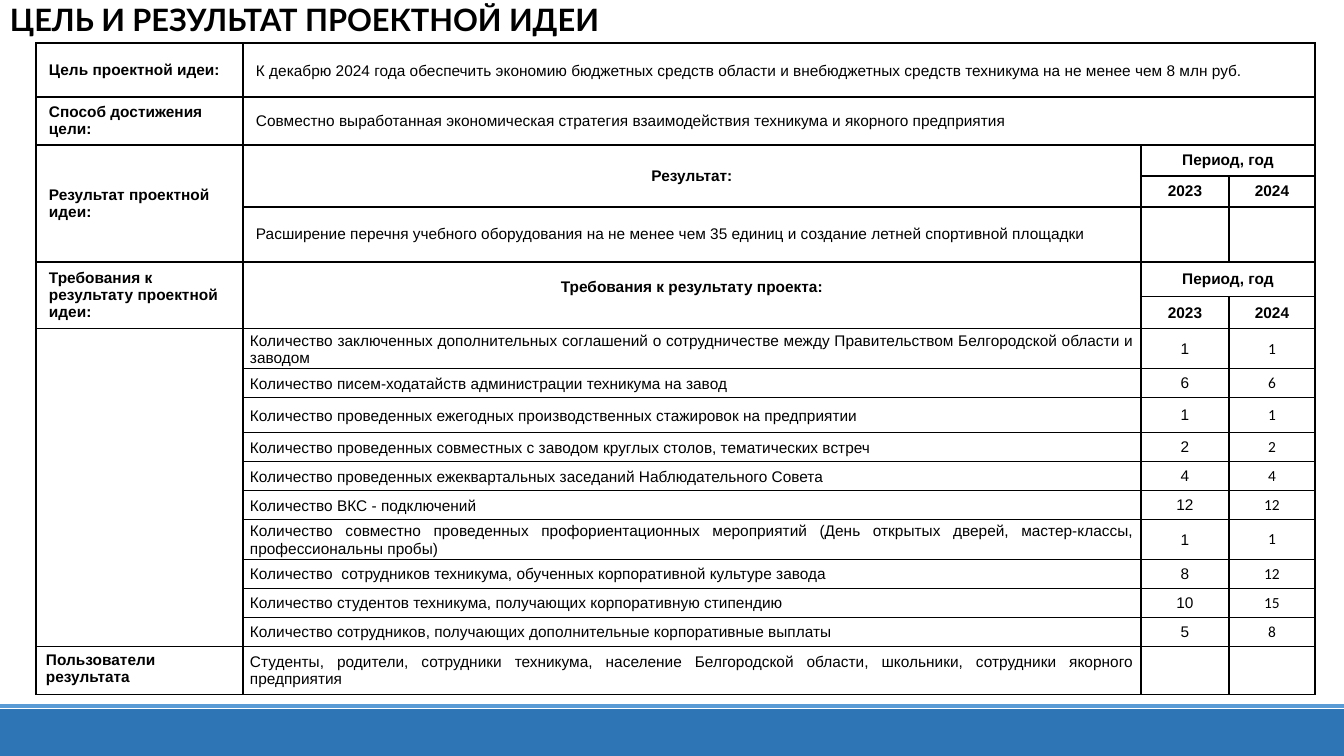
"""Build the slide on the goal and result of the project idea."""
from lxml import etree
from pptx import Presentation
from pptx.dml.color import RGBColor
from pptx.enum.shapes import MSO_CONNECTOR, MSO_SHAPE
from pptx.enum.text import MSO_ANCHOR, PP_ALIGN
from pptx.oxml.ns import qn
from pptx.util import Emu, Pt

LEFT, MID, JUST = PP_ALIGN.LEFT, PP_ALIGN.CENTER, PP_ALIGN.JUSTIFY
TOP, MIDDLE = MSO_ANCHOR.TOP, MSO_ANCHOR.MIDDLE
RECT, LINE = MSO_SHAPE.RECTANGLE, MSO_CONNECTOR.STRAIGHT
WIDTH, HEIGHT = 1344, 756
SCALE = 12192000 / WIDTH

TITLE = "ЦЕЛЬ И РЕЗУЛЬТАТ ПРОЕКТНОЙ ИДЕИ"
PERIOD = "Период, год"
YEARS = ("2023", "2024")
ITEMS = [
    ("Количество заключенных дополнительных соглашений о сотрудничестве между Правительством Белгородской области и заводом", 1, 1),
    ("Количество писем-ходатайств администрации техникума на завод", 6, 6),
    ("Количество проведенных ежегодных производственных стажировок на предприятии", 1, 1),
    ("Количество проведенных совместных с заводом круглых столов, тематических встреч", 2, 2),
    ("Количество проведенных ежеквартальных заседаний Наблюдательного Совета", 4, 4),
    ("Количество ВКС - подключений", 12, 12),
    ("Количество совместно проведенных профориентационных мероприятий (День открытых дверей, мастер-классы, профессиональны пробы)", 1, 1),
    ("Количество  сотрудников техникума, обученных корпоративной культуре завода", 8, 12),
    ("Количество студентов техникума, получающих корпоративную стипендию", 10, 15),
    ("Количество сотрудников, получающих дополнительные корпоративные выплаты", 5, 8),
]
CELLS = [
    (0, 0, "label", "Цель проектной идеи:"),
    (0, 1, "body", "К декабрю 2024 года обеспечить экономию бюджетных средств области и внебюджетных средств техникума на не менее чем 8 млн руб."),
    (1, 0, "label", "Способ достижения цели:"),
    (1, 1, "body", "Совместно выработанная экономическая стратегия взаимодействия техникума и якорного предприятия"),
    (2, 0, "label", "Результат проектной идеи:"),
    (2, 1, "head", "Результат:"),
    (4, 1, "body", "Расширение перечня учебного оборудования на не менее чем 35 единиц и создание летней спортивной площадки"),
    (5, 0, "label", "Требования к результату проектной идеи:"),
    (5, 1, "raised", "Требования к результату проекта:"),
    (17, 0, "users", "Пользователи результата"),
    (17, 1, "item", "Студенты, родители, сотрудники техникума, население Белгородской области, школьники, сотрудники якорного предприятия"),
]
FIRST = 7
SPANS = [(0, 1, 0, 3), (1, 1, 1, 3), (2, 0, 4, 0), (2, 1, 3, 1), (2, 2, 2, 3),
         (5, 0, 6, 0), (5, 1, 6, 1), (5, 2, 5, 3), (7, 0, 16, 0)]
COLS = [207, 898, 88, 86]
ROWS = [54, 48, 31, 31, 55, 35, 32, 40, 29, 35, 29, 29, 29, 40, 29, 29, 29, 48]

WIDE, THIN = (13, 5, 13, 5), (7, 1, 7, 0)
KINDS = {
    "label": (LEFT, True, "Arial", WIDE, MIDDLE),
    "body": (JUST, False, "Arial", WIDE, MIDDLE),
    "head": (MID, True, "Arial", WIDE, MIDDLE),
    "raised": (MID, True, "Arial", (13, 5, 13, 22), MIDDLE),
    "item": (JUST, False, "Arial", THIN, MIDDLE),
    "num": (MID, False, "Arial", WIDE, MIDDLE),
    "alt": (MID, False, "Calibri", WIDE, MIDDLE),
    "users": (LEFT, True, "Arial", (10, 5, 10, 5), TOP),
    "empty": (LEFT, False, "Arial", (0, 0, 0, 0), MIDDLE),
}


def px(num):
    return Emu(round(num * SCALE))


def color(code):
    return RGBColor.from_string(code)


def style(para, size, face, bold, align):
    para.alignment = align
    font = para.font
    font.size, font.name, font.bold = Pt(size), face, bold
    font.color.rgb = color("000000")


def border(cell):
    props = cell._tc.get_or_add_tcPr()
    for spot, side in enumerate(("lnL", "lnR", "lnT", "lnB")):
        line = etree.Element(qn("a:" + side), w=str(Pt(1)))
        fill = etree.SubElement(line, qn("a:solidFill"))
        etree.SubElement(fill, qn("a:srgbClr"), val="000000")
        props.insert(spot, line)


def put(cell, kind, text):
    align, bold, face, pads, anchor = KINDS[kind]
    cell.text = text
    cell.vertical_anchor = anchor
    (cell.margin_left, cell.margin_top,
     cell.margin_right, cell.margin_bottom) = map(px, pads)
    style(cell.text_frame.paragraphs[0], 11, face, bold, align)


def add_grid(slide):
    frame = slide.shapes.add_table(len(ROWS), len(COLS), px(36), px(43),
                                   px(sum(COLS)), px(sum(ROWS)))
    table = frame.table
    table.first_row = table.horz_banding = False
    for col, size in zip(table.columns, COLS):
        col.width = px(size)
    for row, size in zip(table.rows, ROWS):
        row.height = px(size)
    cells = list(CELLS)
    for top in (2, 5):
        cells.append((top, 2, "head", PERIOD))
        cells += [(top + 1, 2 + i, "head", year) for i, year in enumerate(YEARS)]
    for row, (text, old, new) in enumerate(ITEMS, FIRST):
        cells += [(row, 1, "item", text), (row, 2, "num", str(old)),
                  (row, 3, "alt", str(new))]
    filled = {(row, col): (kind, text) for row, col, kind, text in cells}
    for row in range(len(ROWS)):
        for col in range(len(COLS)):
            cell = table.cell(row, col)
            put(cell, *filled.get((row, col), ("empty", "")))
            cell.fill.background()
            border(cell)
    goal = table.cell(0, 1)
    goal.fill.solid()
    goal.fill.fore_color.rgb = color("FFFFFF")
    goal.text_frame.paragraphs[0].line_spacing = 1.15
    for top, left, low, right in SPANS:
        table.cell(top, left).merge(table.cell(low, right))


def add_foot(slide):
    rule = slide.shapes.add_connector(LINE, px(0), px(706), px(WIDTH), px(706))
    rule.line.color.rgb = color("5B9BD5")
    rule.line.width = Pt(2.25)
    etree.SubElement(rule._element.spPr, qn("a:effectLst"))
    band = slide.shapes.add_shape(RECT, px(0), px(710), px(WIDTH), px(46))
    band.shadow.inherit = False
    band.fill.solid()
    band.fill.fore_color.rgb = band.line.color.rgb = color("2E75B6")
    band.line.width = Pt(1)


def add_title(slide):
    box = slide.shapes.add_textbox(px(0), px(-25), px(1277), px(93))
    frame = box.text_frame
    frame.word_wrap = True
    frame.vertical_anchor = MIDDLE
    para = frame.paragraphs[0]
    para.text = TITLE
    para.line_spacing = 0.9
    style(para, 22, "Lato", True, LEFT)


def main():
    deck = Presentation()
    deck.slide_width, deck.slide_height = px(WIDTH), px(HEIGHT)
    slide = deck.slides.add_slide(deck.slide_layouts[6])
    add_foot(slide)
    add_title(slide)
    add_grid(slide)
    deck.save("out.pptx")


if __name__ == "__main__":
    main()
